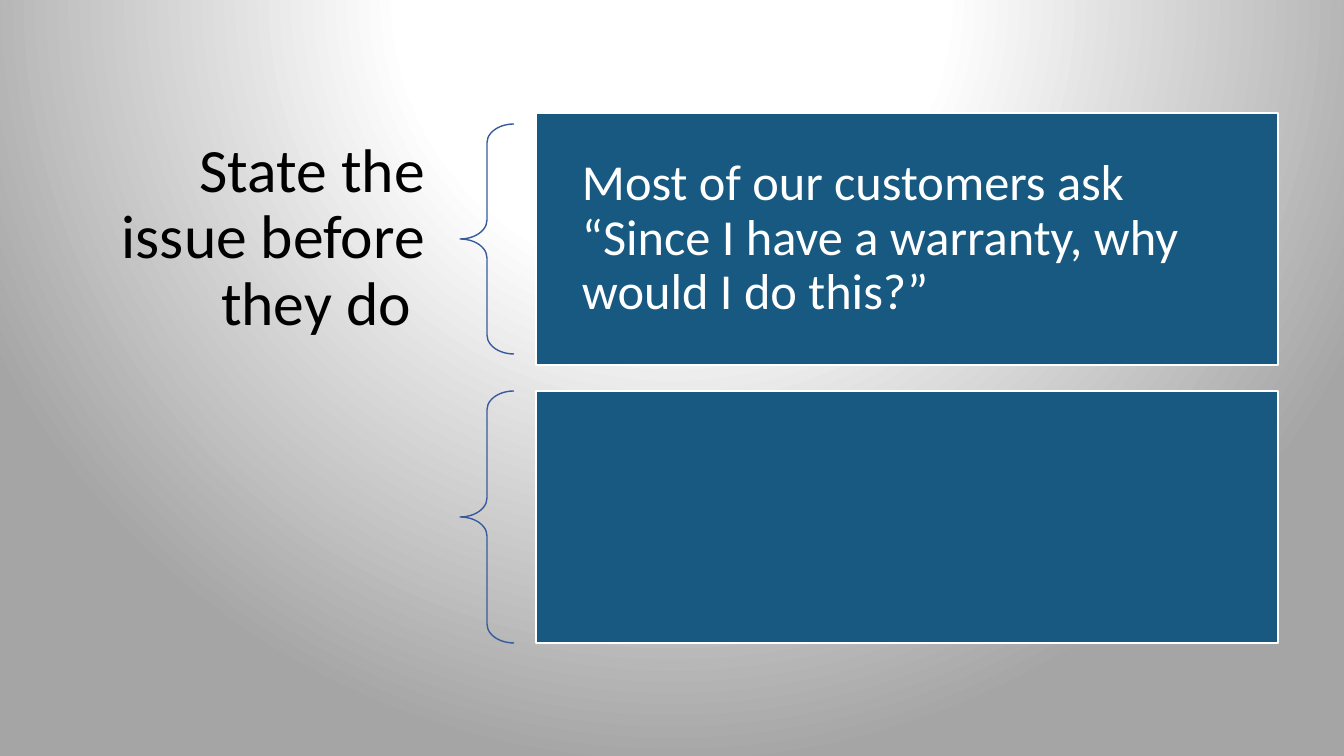
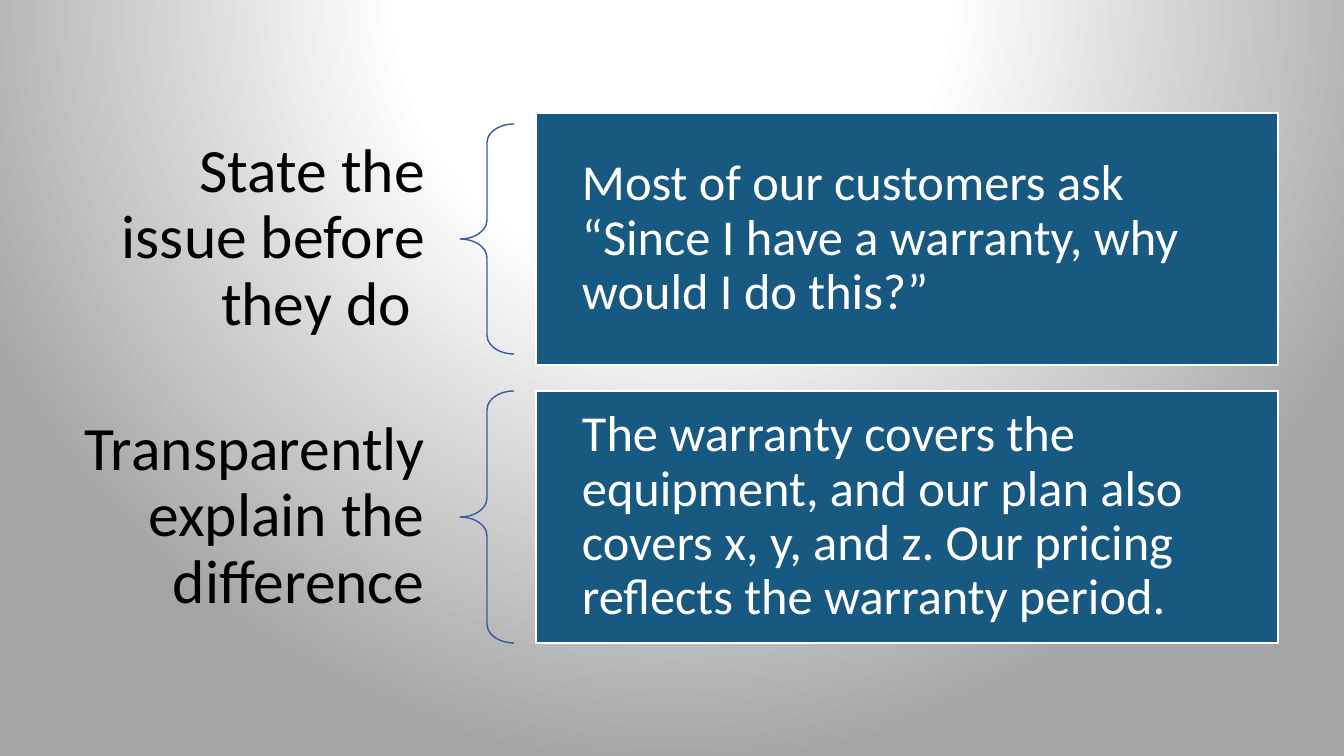
import lxml.etree
import pptx
import pptx.dml.color
import pptx.enum.shapes
import pptx.enum.text
import pptx.oxml.ns
import pptx.util

PX = 914400 / 100.8
WHITE, BLACK, BLUE, BRACE_BLUE, GREY = "FFFFFF", "000000", "175980", "365B9D", "A5A5A5"

ROW_TOP, ROW_HEIGHT, ROW_PITCH = 113, 252, 278
LABEL_INSET = 11
BRACE_INSETS = [11, 0]
LABEL_LEFT, LABEL_WIDTH = 46, 413
BRACE_LEFT, BRACE_WIDTH = 460, 54
PANEL_LEFT, PANEL_WIDTH = 536, 742

ALIGN = pptx.enum.text.PP_ALIGN
LABEL_FORMAT = {"size": 44, "color": BLACK, "align": ALIGN.RIGHT,
                "margins": {"left": 34, "top": 12, "right": 34, "bottom": 12}}
PANEL_FORMAT = {"size": 36, "color": WHITE, "align": ALIGN.LEFT,
                "margins": {"left": 46, "top": 15, "right": 15, "bottom": 15}}

ISSUE = ("State the issue before they do ",
         "Most of our customers ask “Since I have a warranty, why would I do this?”")
DIFFERENCE = ("Transparently explain the difference",
              "The warranty covers the equipment, and our plan also covers x, y, and z. "
              "Our pricing reflects the warranty period.")
SLIDES = [[ISSUE, ("", "")], [ISSUE, DIFFERENCE]]

BACKGROUND = f"""
<a:gradFill {pptx.oxml.ns.nsdecls("a")} rotWithShape="1">
  <a:gsLst>
    <a:gs pos="0"><a:srgbClr val="{WHITE}"/></a:gs>
    <a:gs pos="35000"><a:srgbClr val="{WHITE}"/></a:gs>
    <a:gs pos="100000"><a:srgbClr val="{GREY}"/></a:gs>
  </a:gsLst>
  <a:path path="circle"><a:fillToRect l="50000" t="-80000" r="50000" b="180000"/></a:path>
</a:gradFill>"""


def px(*lengths):
    return [pptx.util.Emu(round(length * PX)) for length in lengths]


def write(box, text, style):
    """Fill a box with one vertically centred paragraph in the given style."""
    frame = box.text_frame
    frame.word_wrap = True
    frame.vertical_anchor = pptx.enum.text.MSO_ANCHOR.MIDDLE
    for side, margin in style["margins"].items():
        setattr(frame, f"margin_{side}", px(margin)[0])
    para = frame.paragraphs[0]
    para.alignment = style["align"]
    para.line_spacing = 0.9
    span = para.add_run()
    span.text = text
    span.font.name = "Calibri"
    span.font.size = pptx.util.Pt(style["size"])
    span.font.color.rgb = pptx.dml.color.RGBColor.from_string(style["color"])


deck = pptx.Presentation()
deck.slide_width, deck.slide_height = px(1344, 756)

master = deck.slide_master
master.background.fill.solid()
solid = master.element.xpath("p:cSld/p:bg/p:bgPr/a:solidFill")[0]
solid.getparent().replace(solid, lxml.etree.fromstring(BACKGROUND))

SHAPE = pptx.enum.shapes.MSO_SHAPE
for rows in SLIDES:
    page = deck.slides.add_slide(deck.slide_layouts[6])
    for index, (label_text, panel_text) in enumerate(rows):
        top = ROW_TOP + index * ROW_PITCH
        inset = BRACE_INSETS[index]

        brace = page.shapes.add_shape(
            SHAPE.LEFT_BRACE, *px(BRACE_LEFT, top + inset, BRACE_WIDTH, ROW_HEIGHT - 2 * inset))
        brace.adjustments[0] = 0.35
        brace.fill.background()
        panel = page.shapes.add_shape(
            SHAPE.RECTANGLE, *px(PANEL_LEFT, top, PANEL_WIDTH, ROW_HEIGHT))
        panel.fill.solid()
        panel.fill.fore_color.rgb = pptx.dml.color.RGBColor.from_string(BLUE)
        for shape, line_color in [(brace, BRACE_BLUE), (panel, WHITE)]:
            shape.shadow.inherit = False
            shape.line.width = pptx.util.Pt(1)
            shape.line.color.rgb = pptx.dml.color.RGBColor.from_string(line_color)

        if label_text:
            label = page.shapes.add_textbox(
                *px(LABEL_LEFT, top + LABEL_INSET, LABEL_WIDTH, ROW_HEIGHT - 2 * LABEL_INSET))
            write(label, label_text, LABEL_FORMAT)
        if panel_text:
            write(panel, panel_text, PANEL_FORMAT)

deck.save("out.pptx")
